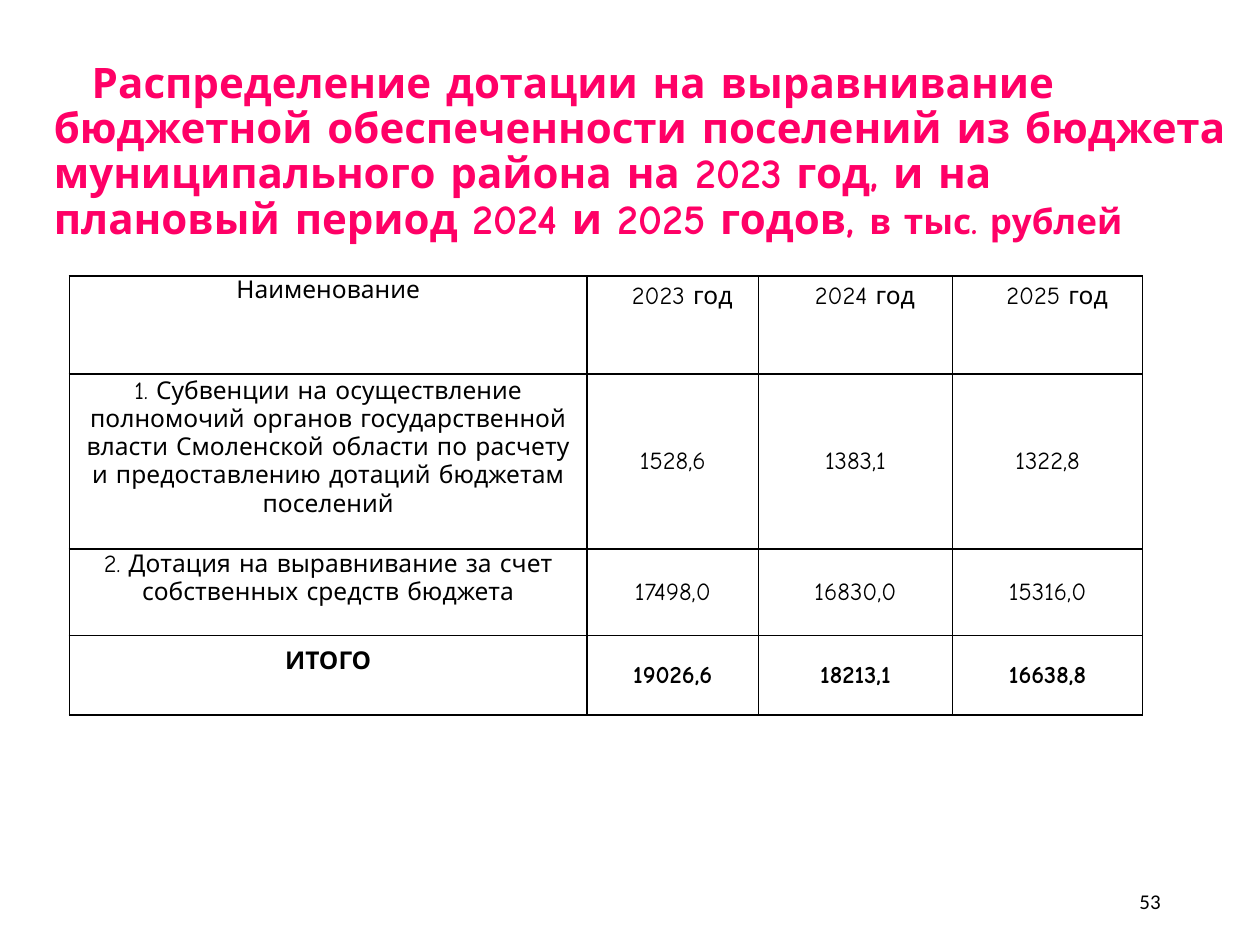
from lxml.etree import SubElement
from pptx import Presentation
from pptx.dml.color import RGBColor
from pptx.enum.text import MSO_ANCHOR, PP_ALIGN
from pptx.oxml.ns import qn
from pptx.util import Inches, Pt

PINK = RGBColor(0xFF, 0x00, 0x66)
BLACK = RGBColor(0x00, 0x00, 0x00)
FONT = "Comic Neue"
NUMBER_FONT = "Calibri"

TITLE = [
    ("Распределение дотации на выравнивание бюджетной обеспеченности поселений "
     "из бюджета муниципального района на 2023 год, и на плановый период "
     "2024 и 2025 годов, ", 24),
    ("в тыс. рублей", 20),
]
COLUMN_WIDTHS = [4.11, 1.36, 1.54, 1.51]
ROW_HEIGHTS = [0.78, 1.34, 0.67, 0.63]
GRANTS = [
    ("Наименование", "2023 год", "2024 год", "2025 год"),
    ("1. Субвенции на осуществление полномочий органов государственной власти "
     "Смоленской области по расчету и предоставлению дотаций бюджетам поселений",
     "1528,6", "1383,1", "1322,8"),
    ("2. Дотация на выравнивание за счет собственных средств бюджета",
     "17498,0", "16830,0", "15316,0"),
    ("ИТОГО", "19026,6", "18213,1", "16638,8"),
]


def add_run(paragraph, text, size, color, font=FONT, bold=False):
    run = paragraph.add_run()
    run.text = text
    run.font.size = Pt(size)
    run.font.name = font
    run.font.bold = bold
    run.font.color.rgb = color


def add_text_frame(slide, left, top, width, height):
    frame = slide.shapes.add_textbox(
        Inches(left), Inches(top), Inches(width), Inches(height)).text_frame
    frame.word_wrap = True
    frame.vertical_anchor = MSO_ANCHOR.MIDDLE
    return frame


def add_title(slide, left, top, width, height):
    paragraph = add_text_frame(slide, left, top, width, height).paragraphs[0]
    paragraph.line_spacing = 0.9
    paragraph._p.get_or_add_pPr().set("indent", str(Inches(0.3)))
    for text, size in TITLE:
        add_run(paragraph, text, size, PINK, bold=True)


def add_page_number(slide, left, top, width, height):
    paragraph = add_text_frame(slide, left, top, width, height).paragraphs[0]
    paragraph.alignment = PP_ALIGN.RIGHT
    add_run(paragraph, "53", 12, BLACK, NUMBER_FONT)


def add_borders(cell):
    properties = cell._tc.get_or_add_tcPr()
    for side in ("a:lnL", "a:lnR", "a:lnT", "a:lnB"):
        line = SubElement(properties, qn(side), w=str(Pt(1)))
        fill = SubElement(line, qn("a:solidFill"))
        SubElement(fill, qn("a:srgbClr"), val=str(BLACK))


def set_margins(cell, left, top, right, bottom):
    cell.margin_left = Inches(left)
    cell.margin_top = Inches(top)
    cell.margin_right = Inches(right)
    cell.margin_bottom = Inches(bottom)


def add_grants_table(slide, left, top, width, height):
    table = slide.shapes.add_table(
        len(GRANTS), len(COLUMN_WIDTHS),
        Inches(left), Inches(top), Inches(width), Inches(height)).table
    for column, share in zip(table.columns, COLUMN_WIDTHS):
        column.width = Inches(width * share / sum(COLUMN_WIDTHS))
    for row, share in zip(table.rows, ROW_HEIGHTS):
        row.height = Inches(height * share / sum(ROW_HEIGHTS))

    for row_index, entries in enumerate(GRANTS):
        is_header = row_index == 0
        is_total = row_index == len(GRANTS) - 1
        for column_index, text in enumerate(entries):
            is_name = column_index == 0
            cell = table.cell(row_index, column_index)
            add_borders(cell)
            cell.fill.background()
            cell.vertical_anchor = MSO_ANCHOR.TOP if is_header else MSO_ANCHOR.MIDDLE
            if is_header and not is_name:
                set_margins(cell, 0.25, 0.05, 0.1, 0.05)
            else:
                set_margins(cell, 0.07, 0, 0.07, 0.22 if is_name else 0)
            paragraph = cell.text_frame.paragraphs[0]
            paragraph.alignment = PP_ALIGN.CENTER
            add_run(paragraph, text, 14, BLACK, bold=is_total)


def main():
    presentation = Presentation()
    presentation.slide_width = Inches(10)
    presentation.slide_height = Inches(7.5)
    slide = presentation.slides.add_slide(presentation.slide_layouts[6])
    add_title(slide, 0.33, 0.39, 9.5, 1.64)
    add_page_number(slide, 7.06, 6.95, 2.25, 0.4)
    add_grants_table(slide, 0.55, 2.19, 8.52, 3.42)
    presentation.save("out.pptx")


if __name__ == "__main__":
    main()
